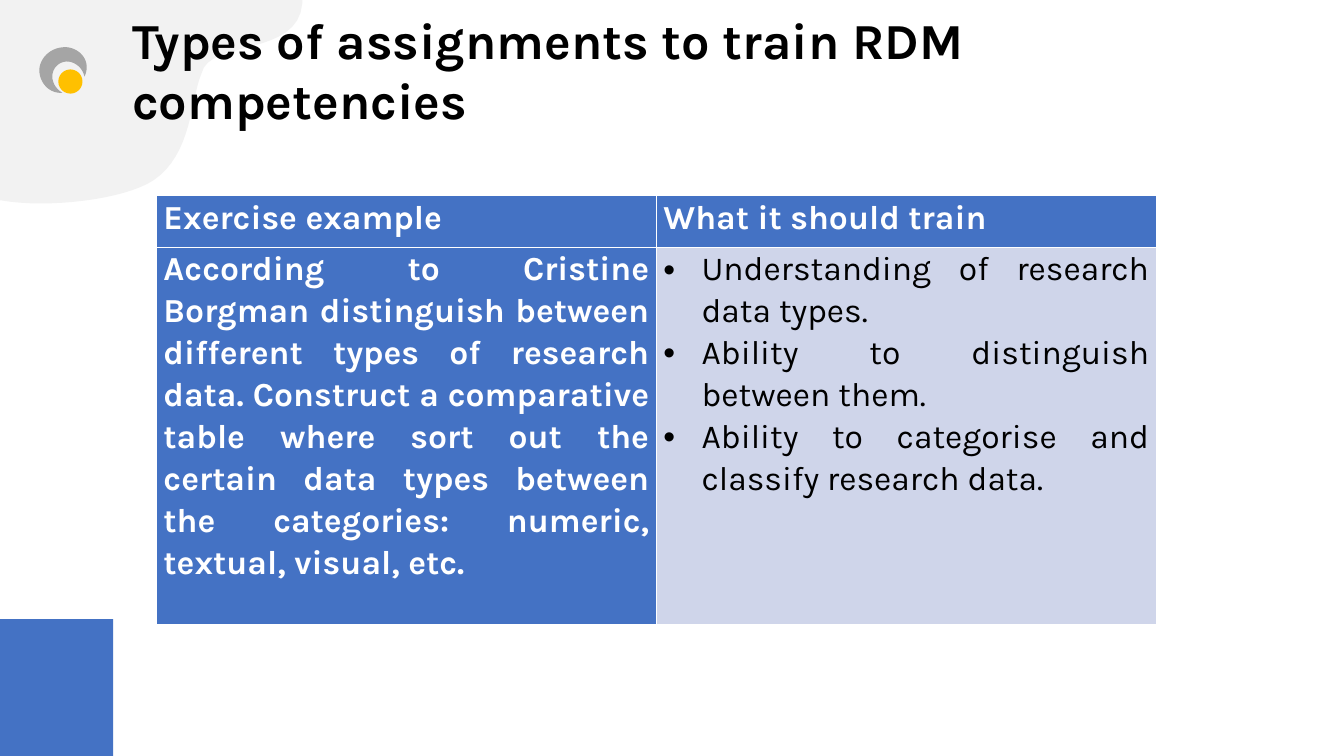
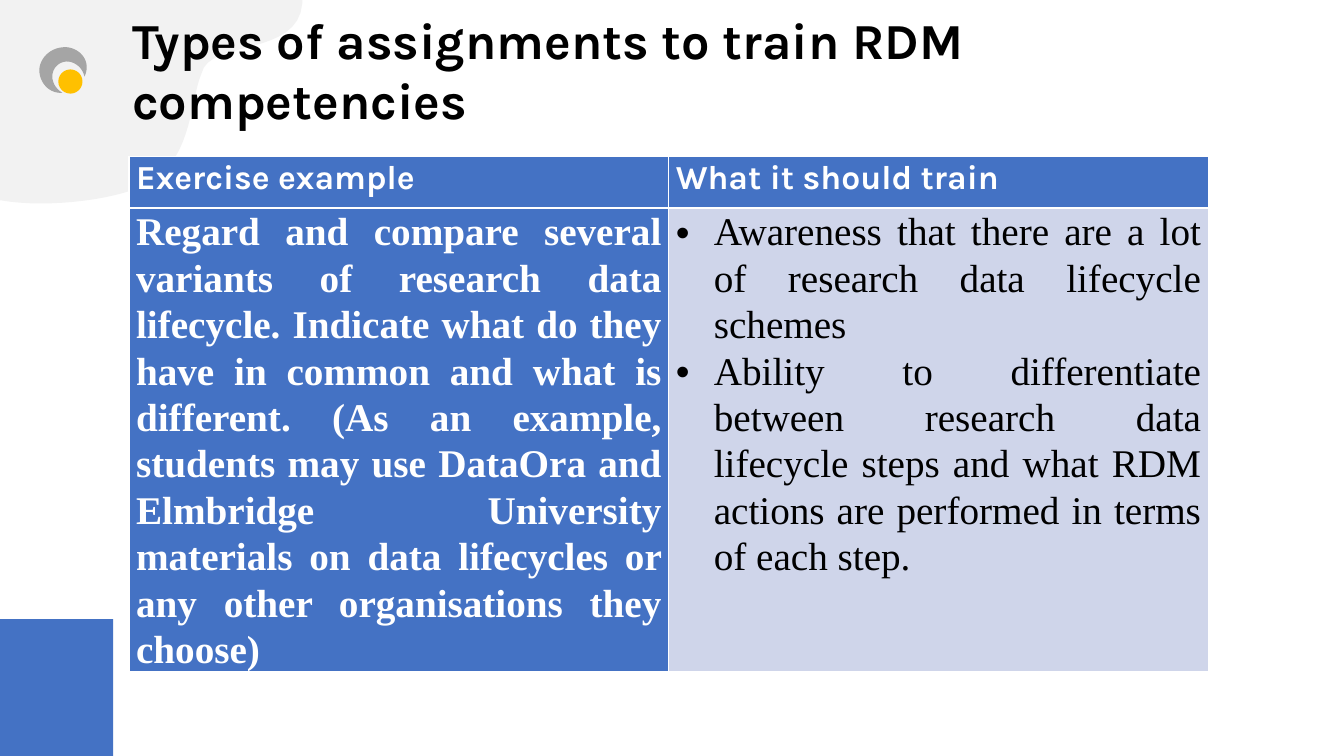
"""Build two slides on assignments that train research data management."""
import lxml.etree
import pptx
import pptx.dml.color
import pptx.enum.shapes
import pptx.enum.text
import pptx.oxml.ns
import pptx.util

Cm = pptx.util.Cm
Pt = pptx.util.Pt
RGBColor = pptx.dml.color.RGBColor

BLACK = RGBColor(0x00, 0x00, 0x00)
WHITE = RGBColor(0xFF, 0xFF, 0xFF)
PALE_GREY = RGBColor(0xF2, 0xF2, 0xF2)
GREY = RGBColor(0xA5, 0xA5, 0xA5)
YELLOW = RGBColor(0xFF, 0xC0, 0x00)
BLUE = RGBColor(0x44, 0x72, 0xC4)
PALE_BLUE = RGBColor(0xCF, 0xD5, 0xEA)

MAIN_FONT = "Karla"
TITLE = "Types of assignments to train RDM competencies"
HEADINGS = ("Exercise example", "What it should train")
HEADER_HEIGHT = 1.3
CURVE_STEPS = 16

BLOB_START = (0, 0)
BLOB_PARTS = [
    (7.62, 0),
    (7.62, 0.08),
    (7.52, 1.45, 5.26, 0.99, 5.08, 1.85),
    (4.8, 2.49, 4.85, 3.89, 3.86, 4.55),
    (3.12, 5.03, 1.22, 5.26, 0.03, 5.05),
    (0, 5.05),
]
CRESCENT_START = (1.57, 2.34)
CRESCENT_PARTS = [
    (1.24, 2.36, 0.99, 2.09, 0.99, 1.75),
    (1.02, 1.42, 1.32, 1.17, 1.68, 1.19),
    (2.03, 1.22, 2.31, 1.55, 2.13, 1.93),
    (2.08, 1.7, 1.88, 1.55, 1.68, 1.55),
    (1.42, 1.57, 1.3, 1.78, 1.32, 1.98),
    (1.35, 2.13, 1.42, 2.24, 1.57, 2.34),
]

EXERCISES = [
    {
        "left": 3.94, "top": 4.93, "column_width": 12.6, "body_height": 9.5,
        "font_name": MAIN_FONT, "size": 24,
        "exercise": "According to Cristine Borgman distinguish between different types of "
                    "research data. Construct a comparative table where sort out the certain "
                    "data types between the categories: numeric, textual, visual, etc.",
        "skills": [
            "Understanding of research data types.",
            "Ability to distinguish between them.",
            "Ability to categorise and classify research data.",
        ],
    },
    {
        "left": 3.25, "top": 3.94, "column_width": 13.6, "body_height": 11.64,
        "font_name": "Times New Roman", "size": 28,
        "exercise": "Regard and compare several variants of research data lifecycle. Indicate "
                    "what do they have in common and what is different. (As an example, "
                    "students may use DataOra and Elmbridge University materials on data "
                    "lifecycles or any other organisations they choose)",
        "skills": [
            "Awareness that there are a lot of research data lifecycle schemes",
            "Ability to differentiate between research data lifecycle steps and what RDM "
            "actions are performed in terms of each step.",
        ],
    },
]


def paint(shape, color):
    """Give a shape a flat fill without line or shadow."""
    shape.shadow.inherit = False
    shape.fill.solid()
    shape.fill.fore_color.rgb = color
    shape.line.fill.background()
    return shape


def outline_points(start, parts):
    """Turn line ends and cubic curves into a list of points."""
    points = [start]
    for part in parts:
        if len(part) == 2:
            points.append(part)
            continue
        controls = [points[-1], part[:2], part[2:4], part[4:]]
        for step in range(1, CURVE_STEPS + 1):
            t = step / CURVE_STEPS
            weights = ((1 - t) ** 3, 3 * t * (1 - t) ** 2, 3 * t * t * (1 - t), t ** 3)
            points.append(tuple(
                sum(weight * control[axis] for weight, control in zip(weights, controls))
                for axis in (0, 1)))
    return points


def add_outline(slide, start, parts, color):
    """Add a closed shape with curved edges."""
    points = [(Cm(x), Cm(y)) for x, y in outline_points(start, parts)]
    builder = slide.shapes.build_freeform(*points[0])
    builder.add_line_segments(points[1:], close=True)
    return paint(builder.convert_to_shape(), color)


def add_preset(slide, kind, left, top, width, height, color):
    """Add a flat preset shape."""
    shape = slide.shapes.add_shape(kind, Cm(left), Cm(top), Cm(width), Cm(height))
    return paint(shape, color)


def decorate_layout(layout, slide):
    """Draw the corner ornaments once and move them to the layout."""
    kinds = pptx.enum.shapes.MSO_SHAPE
    for placeholder in list(layout.placeholders):
        if placeholder.placeholder_format.type != pptx.enum.shapes.PP_PLACEHOLDER.TITLE:
            layout.shapes.element.remove(placeholder.element)
    ornaments = [
        add_outline(slide, BLOB_START, BLOB_PARTS, PALE_GREY),
        add_outline(slide, CRESCENT_START, CRESCENT_PARTS, GREY),
        add_preset(slide, kinds.OVAL, 1.47, 1.75, 0.61, 0.61, YELLOW),
        add_preset(slide, kinds.RECTANGLE, 0, 15.6, 2.85, 3.45, BLUE),
    ]
    for ornament in ornaments:
        layout.shapes.element.append(ornament.element)


def format_font(paragraph, name, size, color, bold):
    """Set the font of a whole paragraph."""
    paragraph.font.name = name
    paragraph.font.size = Pt(size)
    paragraph.font.color.rgb = color
    paragraph.font.bold = bold


def set_title(slide):
    """Fill and place the title."""
    title = slide.shapes.title
    title.left, title.top, title.width, title.height = Cm(3.33), Cm(0.76), Cm(28.83), Cm(1.98)
    frame = title.text_frame
    frame.text = TITLE
    frame.word_wrap = True
    frame.auto_size = pptx.enum.text.MSO_AUTO_SIZE.NONE
    frame.vertical_anchor = pptx.enum.text.MSO_ANCHOR.MIDDLE
    frame.margin_left = frame.margin_right = 0
    frame.margin_top = frame.margin_bottom = Cm(0.18)
    paragraph = frame.paragraphs[0]
    paragraph.alignment = pptx.enum.text.PP_ALIGN.LEFT
    format_font(paragraph, MAIN_FONT, 36, BLACK, True)


def add_bullet(paragraph):
    """Give a paragraph a bullet with a hanging indent."""
    properties = paragraph._p.get_or_add_pPr()
    properties.set("marL", str(Cm(0.96)))
    properties.set("indent", str(-Cm(0.96)))
    for tag, name, value in (("a:buFont", "typeface", "Arial"), ("a:buChar", "char", "•")):
        element = lxml.etree.SubElement(properties, pptx.oxml.ns.qn(tag))
        element.set(name, value)


def fill_cell(cell, lines, fill, font_name, size, color, bold, bulleted=False):
    """Write justified paragraphs into a coloured cell."""
    cell.fill.solid()
    cell.fill.fore_color.rgb = fill
    cell.margin_left = cell.margin_right = Cm(0.18)
    cell.margin_top = cell.margin_bottom = 0
    cell.text_frame.text = "\n".join(lines)
    for paragraph in cell.text_frame.paragraphs:
        if bulleted:
            add_bullet(paragraph)
        paragraph.alignment = pptx.enum.text.PP_ALIGN.JUSTIFY
        paragraph.line_spacing = 1.07
        format_font(paragraph, font_name, size, color, bold)
    paragraph.space_after = Pt(8)


def add_exercise_table(slide, left, top, column_width, body_height, font_name, size,
                       exercise, skills):
    """Add the table that pairs an exercise with the skills it trains."""
    frame = slide.shapes.add_table(2, 2, Cm(left), Cm(top), Cm(2 * column_width),
                                   Cm(HEADER_HEIGHT + body_height))
    table = frame.table
    table.horz_banding = False
    for column in table.columns:
        column.width = Cm(column_width)
    for row, height in zip(table.rows, (HEADER_HEIGHT, body_height)):
        row.height = Cm(height)
    for index, heading in enumerate(HEADINGS):
        fill_cell(table.cell(0, index), [heading], BLUE, MAIN_FONT, 24, WHITE, True)
    fill_cell(table.cell(1, 0), [exercise], BLUE, font_name, size, WHITE, True)
    fill_cell(table.cell(1, 1), skills, PALE_BLUE, font_name, size, BLACK, False, bulleted=True)


def main():
    """Build and save the presentation."""
    presentation = pptx.Presentation()
    presentation.slide_width, presentation.slide_height = Cm(33.87), Cm(19.05)
    layout = presentation.slide_layouts.get_by_name("Title Only")
    slides = [presentation.slides.add_slide(layout) for _ in EXERCISES]
    decorate_layout(layout, slides[0])
    for slide, exercise in zip(slides, EXERCISES):
        set_title(slide)
        add_exercise_table(slide, **exercise)
    presentation.save("out.pptx")


if __name__ == "__main__":
    main()
